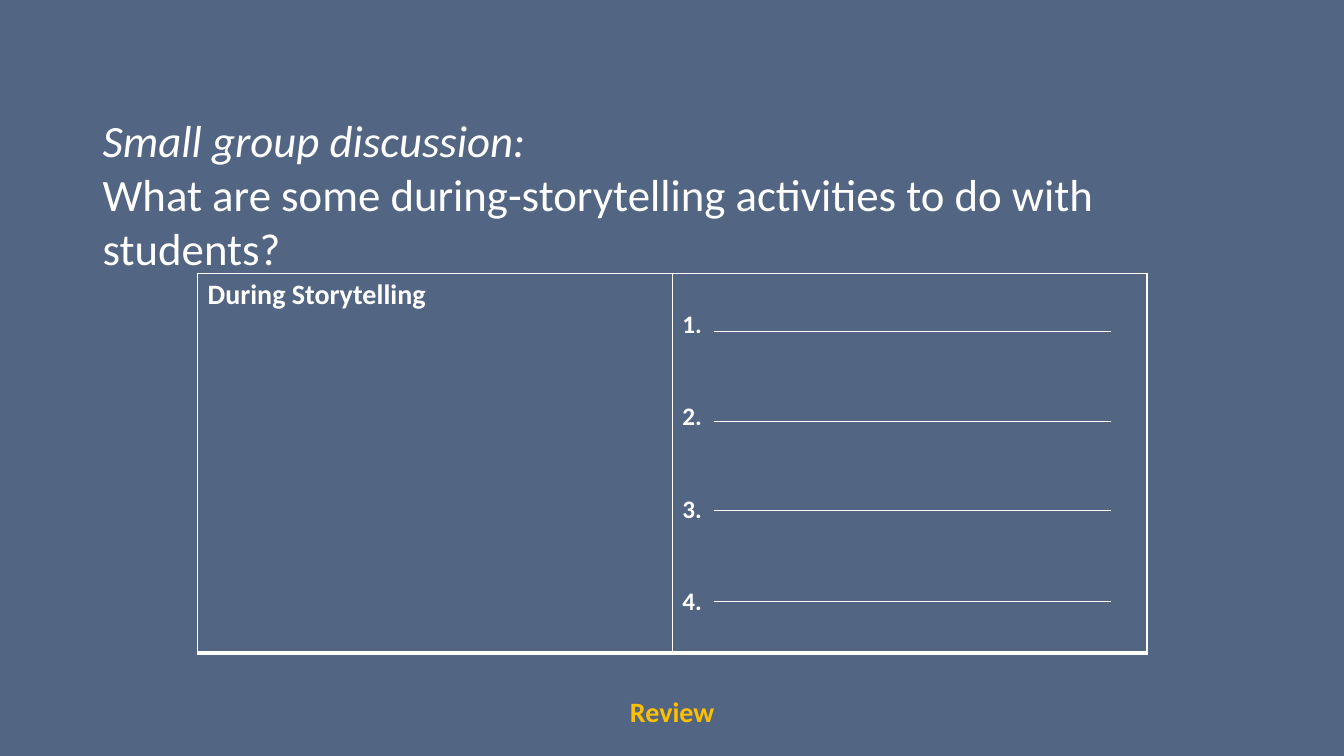
from typing import NamedTuple

from lxml.etree import SubElement as Sub
from pptx import Presentation
from pptx.dml.color import RGBColor as Color
from pptx.enum.shapes import MSO_CONNECTOR as Link
from pptx.oxml.ns import qn
from pptx.util import Inches, Pt

BACK = Color(0x52, 0x65, 0x82)
WHITE = Color(0xFF, 0xFF, 0xFF)
GOLD = Color(0xFF, 0xC0, 0x00)
FONT = "Calibri"
WIDE, HIGH = Inches(13.33), Inches(7.5)
RULES = (43.87, 55.73, 67.47, 79.6)
ENDS = (53.1, 82.65)


class Box(NamedTuple):
    left: float
    top: float
    width: float
    height: float


class Style(NamedTuple):
    size: int
    color: Color = WHITE
    bold: bool = False
    slant: bool = False


class Note(NamedTuple):
    box: Box
    lines: tuple[tuple[str, Style], ...]
    pitch: float = 1.0


NOTES = (
    Note(Box(46.13, 91.73, 8.48, 5.6), (("Review", Style(20, GOLD, True)),), 0.9),
    Note(Box(6.9, 14.27, 86.25, 63.47), (
        ("Small group discussion:", Style(32, slant=True)),
        ("What are some during-storytelling activities to do with students?", Style(32)),
    )),
)
GRID = Box(14.7, 36.13, 70.65, 50.27)
HEAD = Style(20, bold=True)
ITEM = Style(18, bold=True)


def across(share: float) -> int:
    return round(WIDE * share / 100)


def down(share: float) -> int:
    return round(HIGH * share / 100)


def place(box: Box) -> tuple[int, int, int, int]:
    return across(box.left), down(box.top), across(box.width), down(box.height)


def dress(para, style: Style) -> None:
    for run in para.runs:
        font = run.font
        font.name, font.size = FONT, Pt(style.size)
        font.bold, font.italic = style.bold, style.slant
        font.color.rgb = style.color


def write(slide, note: Note) -> None:
    frame = slide.shapes.add_textbox(*place(note.box)).text_frame
    frame.word_wrap = True
    frame.text = "\n".join(text for text, _ in note.lines)
    for para, (_, style) in zip(frame.paragraphs, note.lines):
        para.line_spacing = note.pitch
        dress(para, style)


def edge(cell) -> None:
    cell.fill.background()
    props = cell._tc.get_or_add_tcPr()
    for spot, (side, width) in enumerate((("L", 1), ("R", 1), ("T", 1), ("B", 3))):
        line = Sub(props, qn(f"a:ln{side}"), w=str(Pt(width)))
        Sub(Sub(line, qn("a:solidFill")), qn("a:srgbClr"), val=str(WHITE))
        props.insert(spot, line)


def tabulate(slide) -> None:
    table = slide.shapes.add_table(1, 2, *place(GRID)).table
    table.first_row = table.horz_banding = False
    title, tasks = table.cell(0, 0), table.cell(0, 1)
    title.text_frame.text = "During Storytelling"
    dress(title.text_frame.paragraphs[0], HEAD)
    tasks.margin_top = Inches(0.36)
    tasks.text_frame.text = "\n".join(f"{num}." for num in range(1, len(RULES) + 1))
    for num, para in enumerate(tasks.text_frame.paragraphs):
        if num:
            para.space_before = Pt(44)
        dress(para, ITEM)
    for cell in (title, tasks):
        edge(cell)


def rule(slide, row: float) -> None:
    start, stop = map(across, ENDS)
    line = slide.shapes.add_connector(Link.STRAIGHT, start, down(row), stop, down(row))
    line.line.color.rgb = WHITE
    line.line.width = Pt(0.5)
    Sub(line._element.spPr, qn("a:effectLst"))


def main() -> None:
    deck = Presentation()
    deck.slide_width, deck.slide_height = WIDE, HIGH
    slide = deck.slides.add_slide(deck.slide_layouts[6])
    fill = slide.background.fill
    fill.solid()
    fill.fore_color.rgb = BACK
    for note in NOTES:
        write(slide, note)
    tabulate(slide)
    for row in RULES:
        rule(slide, row)
    deck.save("out.pptx")


if __name__ == "__main__":
    main()
